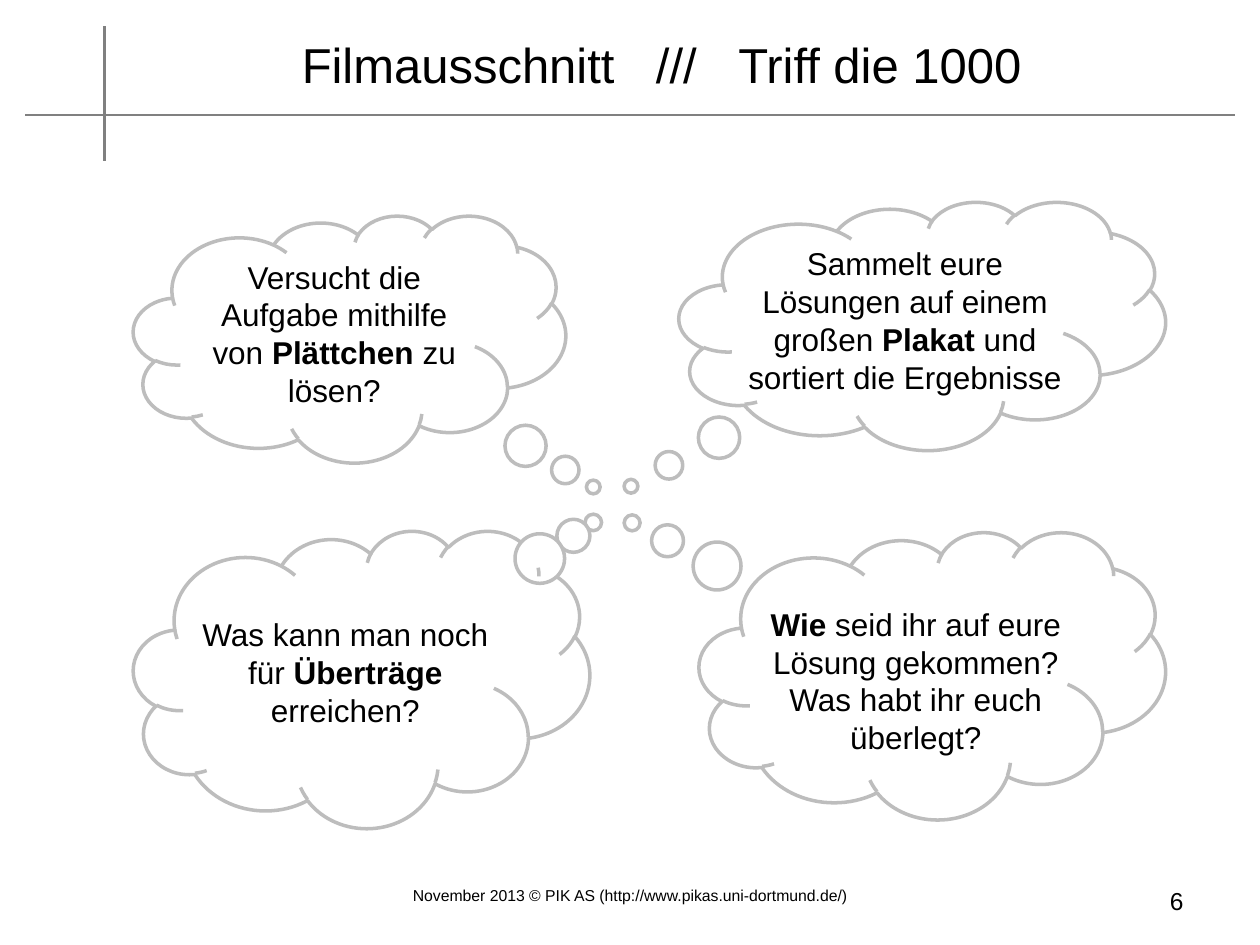
from lxml.etree import SubElement
from pptx import Presentation
from pptx.dml.color import RGBColor
from pptx.enum.shapes import MSO_CONNECTOR, MSO_SHAPE
from pptx.enum.text import MSO_ANCHOR as Anchor, MSO_AUTO_SIZE, PP_ALIGN as Align
from pptx.oxml.ns import qn
from pptx.util import Inches, Pt

COLORS = {"text": "000000", "rule": "808080", "cloud": "FFFFFF", "outline": "BDBDBD"}
FONT = "Arial"

# Box, pointer offset, anchor, and text with the stressed word between asterisks
CLOUDS = [
    ((1.06, 4.21, 3.62, 2.36), (0.508, -0.527), Anchor.MIDDLE,
     "Was kann man noch für *Überträge* erreichen?"),
    ((1.06, 1.71, 3.43, 1.96), (0.564, 0.6), Anchor.MIDDLE,
     "Versucht die Aufgabe mithilfe von *Plättchen* zu lösen?"),
    ((5.39, 1.6, 3.86, 1.97), (-0.599, 0.647), Anchor.MIDDLE,
     "Sammelt eure Lösungen auf einem großen *Plakat* und sortiert die Ergebnisse"),
    ((5.55, 4.22, 3.7, 2.28), (-0.644, -0.531), Anchor.BOTTOM,
     "*Wie* seid ihr auf eure Lösung gekommen? Was habt ihr euch überlegt?"),
]


def color(name):
    return RGBColor.from_string(COLORS[name])


def format_paragraph(paragraph, size, align):
    paragraph.alignment = align
    font = paragraph.font
    font.name, font.size = FONT, Pt(size)
    font.color.rgb = color("text")


def add_rule(slide, *ends):
    rule = slide.shapes.add_connector(MSO_CONNECTOR.STRAIGHT, *map(Inches, ends))
    rule.line.color.rgb = color("rule")
    rule.line.width = Pt(1.25)
    SubElement(rule._element.spPr, qn("a:effectLst"))


def set_title(slide, parts, gap):
    """Join the parts by single spaces, each widened by gap points."""
    title = slide.shapes.title
    title.left, title.top, title.width, title.height = map(Inches, (1, 0.17, 8.5, 0.67))
    frame = title.text_frame
    frame.auto_size = MSO_AUTO_SIZE.NONE
    frame.vertical_anchor = Anchor.MIDDLE
    paragraph = frame.paragraphs[0]
    for index, part in enumerate(parts):
        if index:
            space = paragraph.add_run()
            space.text = " "
            space._r.get_or_add_rPr().set("spc", str(gap * 100))
        paragraph.add_run().text = part
    format_paragraph(paragraph, 28, Align.CENTER)


def add_label(slide, box, text, size, align):
    frame = slide.shapes.add_textbox(*map(Inches, box)).text_frame
    frame.word_wrap = True
    frame.text = text
    format_paragraph(frame.paragraphs[0], size, align)


def add_cloud(slide, box, pointer, anchor, text):
    cloud = slide.shapes.add_shape(MSO_SHAPE.CLOUD_CALLOUT, *map(Inches, box))
    cloud.adjustments[0], cloud.adjustments[1] = pointer
    cloud.shadow.inherit = False
    cloud.fill.solid()
    cloud.fill.fore_color.rgb = color("cloud")
    cloud.line.color.rgb = color("outline")
    cloud.line.width = Pt(2)

    frame = cloud.text_frame
    frame.word_wrap = True
    frame.vertical_anchor = anchor
    frame.margin_left = frame.margin_right = 0
    paragraph = frame.paragraphs[0]
    for index, part in enumerate(text.split("*")):
        if part:
            run = paragraph.add_run()
            run.text = part
            run.font.bold = index % 2 == 1
    format_paragraph(paragraph, 18, Align.CENTER)


def main():
    prs = Presentation()
    prs.slide_width, prs.slide_height = Inches(10), Inches(7.5)
    slide = prs.slides.add_slide(prs.slide_layouts[5])

    # Crossed rules and title
    add_rule(slide, 0.2, 0.91, 9.8, 0.91)
    add_rule(slide, 0.83, 0.21, 0.83, 1.28)
    set_title(slide, ["Filmausschnitt", "///", "Triff die 1000"], gap=16)

    # Thought clouds
    for cloud in CLOUDS:
        add_cloud(slide, *cloud)

    # Footer and page number
    add_label(slide, (2.56, 6.98, 4.88, 0.52),
              "November 2013 © PIK AS (http://www.pikas.uni-dortmund.de/)", 9, Align.CENTER)
    add_label(slide, (7.2, 6.98, 2.29, 0.52), "6", 14, Align.RIGHT)

    prs.save("out.pptx")


if __name__ == "__main__":
    main()
